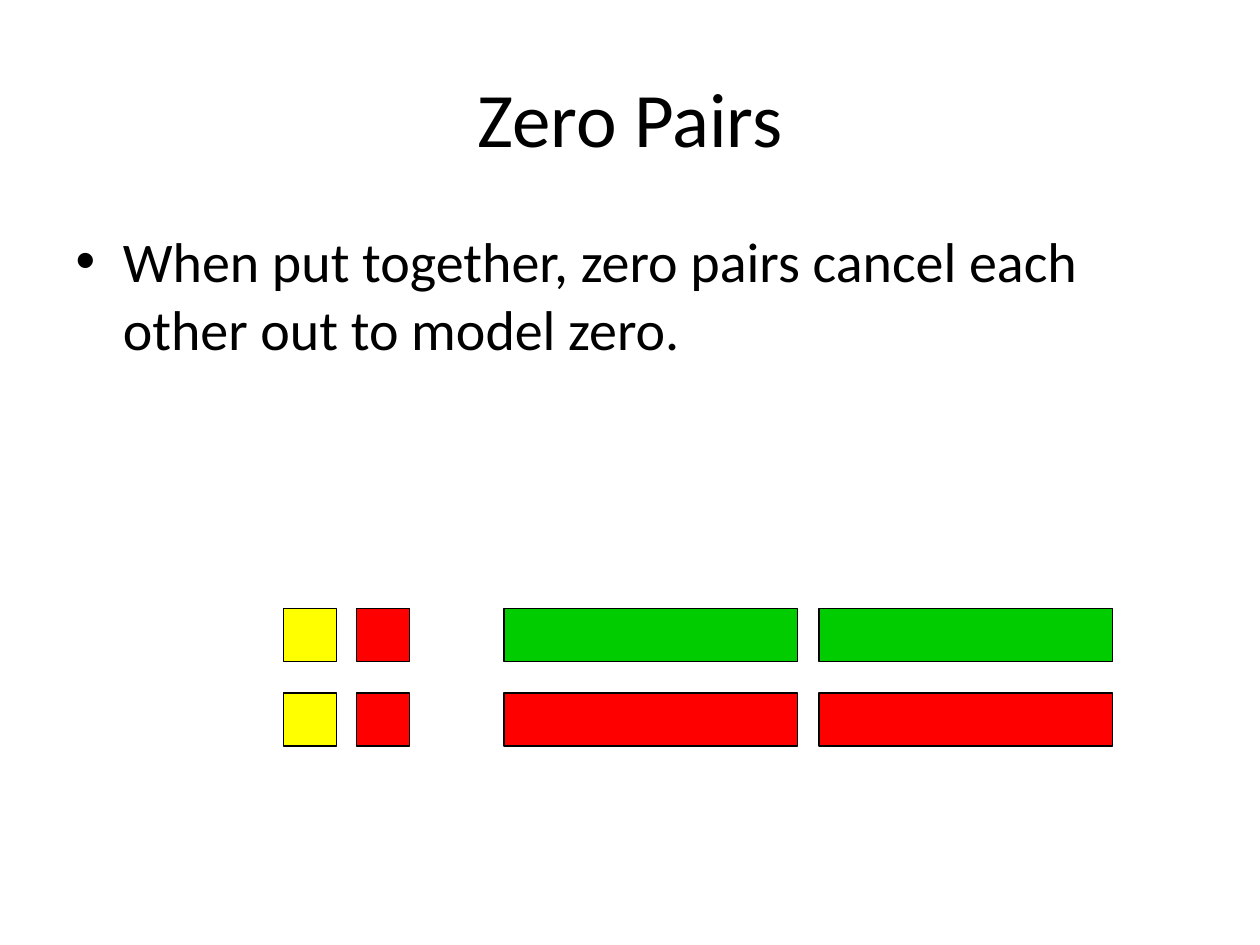
from typing import NamedTuple

from pptx import Presentation
from pptx.dml.color import RGBColor
from pptx.enum import shapes, text
from pptx.util import Inches, Pt

BLACK = RGBColor(0x00, 0x00, 0x00)
YELLOW = RGBColor(0xFF, 0xFF, 0x00)
RED = RGBColor(0xFF, 0x00, 0x00)
GREEN = RGBColor(0x00, 0xCC, 0x00)

TILE_HEIGHT = 0.42
ROW_TOPS = (4.83, 5.5)


class TileColumn(NamedTuple):
    left: float
    width: float
    colors: tuple[RGBColor, RGBColor]  # upper tile, lower tile


COLUMNS = (
    TileColumn(2.25, 0.42, (YELLOW, YELLOW)),
    TileColumn(2.83, 0.42, (RED, RED)),
    TileColumn(4, 2.33, (GREEN, RED)),
    TileColumn(6.5, 2.33, (GREEN, RED)),
)


def fill_placeholder(box, top: float, height: float, wording: str, size: int) -> None:
    box.left, box.top = Inches(0.5), Inches(top)
    box.width, box.height = Inches(9), Inches(height)
    box.text_frame.text = wording
    font = box.text_frame.paragraphs[0].font
    font.name = "Calibri"
    font.size = Pt(size)
    font.color.rgb = BLACK


def draw_column(page, column: TileColumn) -> None:
    for top, color in zip(ROW_TOPS, column.colors):
        tile = page.shapes.add_shape(
            shapes.MSO_SHAPE.RECTANGLE,
            Inches(column.left), Inches(top),
            Inches(column.width), Inches(TILE_HEIGHT),
        )
        tile.shadow.inherit = False
        tile.fill.solid()
        tile.fill.fore_color.rgb = color
        tile.line.color.rgb = BLACK
        tile.line.width = Pt(0.75)


def main() -> None:
    deck = Presentation()
    deck.slide_width, deck.slide_height = Inches(10), Inches(7.5)
    # The title-and-content layout supplies the bullet and its hanging indent.
    page = deck.slides.add_slide(deck.slide_layouts[1])

    title, body = page.placeholders
    fill_placeholder(title, 0.3, 1.25, "Zero Pairs", 44)
    title.text_frame.vertical_anchor = text.MSO_ANCHOR.MIDDLE
    title.text_frame.paragraphs[0].alignment = text.PP_ALIGN.CENTER
    fill_placeholder(
        body, 1.75, 4.95,
        "When put together, zero pairs cancel each other out to model zero.", 32,
    )

    for column in COLUMNS:
        draw_column(page, column)
    deck.save("out.pptx")


if __name__ == "__main__":
    main()
